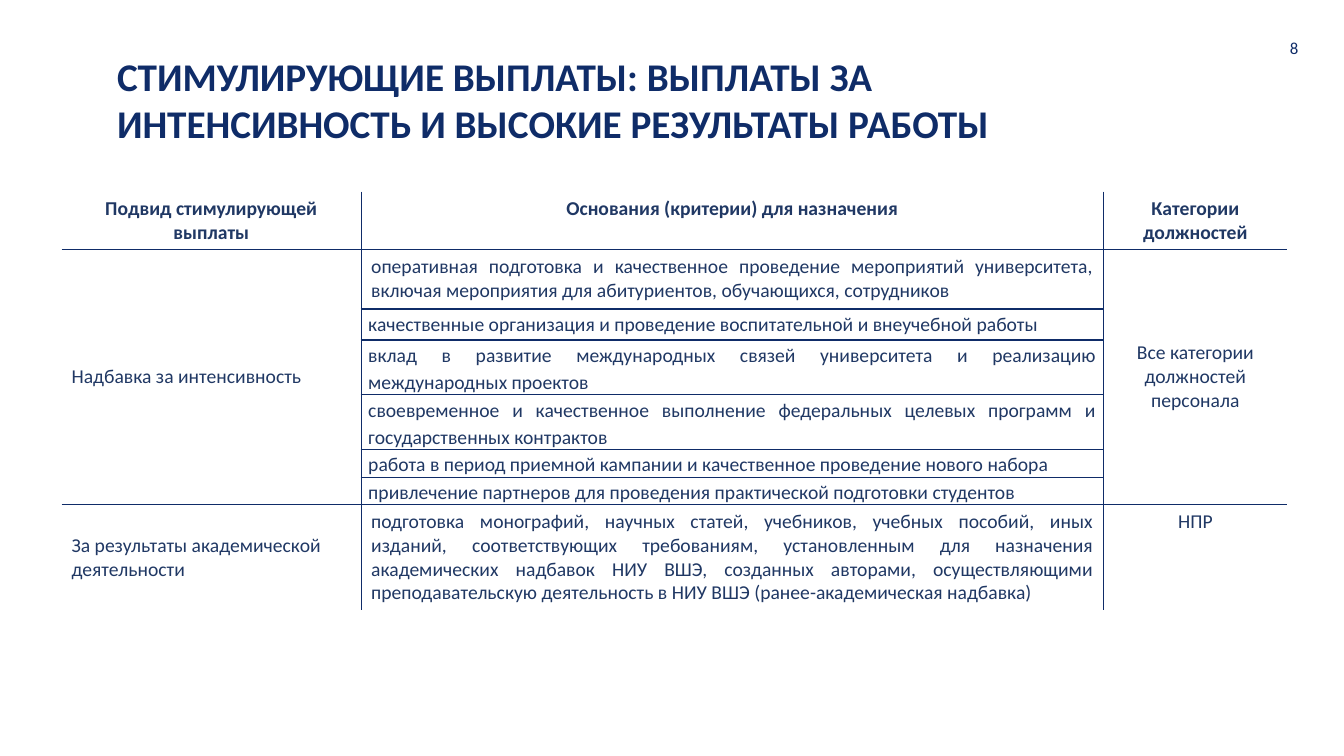
import pptx
import pptx.dml.color
import pptx.enum.text
import pptx.oxml
import pptx.oxml.ns
import pptx.util
from lxml import etree

Cm = pptx.util.Cm
Pt = pptx.util.Pt
ALIGN = pptx.enum.text.PP_ALIGN
ANCHOR = pptx.enum.text.MSO_ANCHOR

NAVY = "0F2C68"
INK = "203864"


def color(value):
    return pptx.dml.color.RGBColor.from_string(value)


class Deck:
    font = "Calibri"

    def __init__(self, width, height):
        self.show = pptx.Presentation()
        self.show.slide_width, self.show.slide_height = Cm(width), Cm(height)
        self.slide = self.show.slides.add_slide(self.show.slide_layouts[6])

    def add_words(self, frame, words, size, ink, bold=False, align=ALIGN.LEFT, spacing=None):
        paragraph = frame.paragraphs[0]
        paragraph.alignment = align
        if spacing:
            paragraph.line_spacing = spacing
        run = paragraph.add_run()
        run.text = words
        run.font.name, run.font.size, run.font.bold = self.font, Pt(size), bold
        run.font.color.rgb = color(ink)

    def text(self, box, words, size, bold=False, align=ALIGN.LEFT,
             anchor=ANCHOR.TOP, inset=None):
        frame = self.slide.shapes.add_textbox(*map(Cm, box)).text_frame
        frame.word_wrap = True
        frame.vertical_anchor = anchor
        if inset is not None:
            frame.margin_left = frame.margin_right = Cm(inset)
            frame.margin_top = frame.margin_bottom = Cm(inset)
        self.add_words(frame, words, size, NAVY, bold, align)

    def table(self, left, top, widths, heights):
        grid = self.slide.shapes.add_table(
            len(heights), len(widths), Cm(left), Cm(top),
            Cm(sum(widths)), Cm(sum(heights))).table
        grid.first_row = grid.horz_banding = False
        for column, width in zip(grid.columns, widths):
            column.width = Cm(width)
        for row, height in zip(grid.rows, heights):
            row.height = Cm(height)
        # Rules on inner edges only
        for r in range(len(heights)):
            for c in range(len(widths)):
                cell = grid.cell(r, c)
                cell.fill.background()
                self.borders(cell, {"lnL": c > 0, "lnR": c < len(widths) - 1,
                                    "lnT": r > 0, "lnB": r < len(heights) - 1})
        return grid

    def borders(self, cell, edges):
        qn = pptx.oxml.ns.qn
        properties = cell._tc.get_or_add_tcPr()
        for position, (edge, drawn) in enumerate(edges.items()):
            line = etree.Element(qn("a:" + edge), w=str(Pt(1)))
            if drawn:
                fill = etree.SubElement(line, qn("a:solidFill"))
                etree.SubElement(fill, qn("a:srgbClr"), val=NAVY)
            else:
                etree.SubElement(line, qn("a:noFill"))
            properties.insert(position, line)

    def cell(self, cell, words, bold=False, align=ALIGN.LEFT, anchor=ANCHOR.TOP, tight=False):
        cell.vertical_anchor = anchor
        if tight:
            cell.margin_left = cell.margin_right = Cm(0.18)
            cell.margin_top = cell.margin_bottom = 0
        self.add_words(cell.text_frame, words, 14, INK, bold, align, 1.15 if tight else None)

    def save(self):
        self.show.save("out.pptx")


HEADINGS = ["Подвид стимулирующей выплаты", "Основания (критерии) для назначения",
            "Категории должностей"]
CRITERIA = [
    "оперативная подготовка и качественное проведение мероприятий университета, "
    "включая мероприятия для абитуриентов, обучающихся, сотрудников",
    "качественные организация и проведение воспитательной и внеучебной работы",
    "вклад в развитие международных связей университета и реализацию международных проектов",
    "своевременное и качественное выполнение федеральных целевых программ "
    "и государственных контрактов",
    "работа в период приемной кампании и качественное проведение нового набора",
    "привлечение партнеров для проведения практической подготовки студентов",
    "подготовка монографий, научных статей, учебников, учебных пособий, иных изданий, "
    "соответствующих требованиям, установленным для назначения академических надбавок "
    "НИУ ВШЭ, созданных авторами, осуществляющими преподавательскую деятельность "
    "в НИУ ВШЭ (ранее-академическая надбавка)",
]


def main():
    deck = Deck(33.87, 19.05)

    # Table of payments
    payments = deck.table(1.55, 4.83, [7.55, 18.71, 4.63],
                          [1.45, 1.5, 0.78, 1.38, 1.38, 0.69, 0.69, 2.64])
    last = len(CRITERIA)
    for column in (0, 2):
        payments.cell(1, column).merge(payments.cell(last - 1, column))
    for column, heading in enumerate(HEADINGS):
        deck.cell(payments.cell(0, column), heading, bold=True, align=ALIGN.CENTER)
    for row, criterion in enumerate(CRITERIA, 1):
        deck.cell(payments.cell(row, 1), criterion, align=ALIGN.JUSTIFY, tight=1 < row < last)

    # Payment kinds and staff categories
    deck.cell(payments.cell(1, 0), "Надбавка за интенсивность", anchor=ANCHOR.MIDDLE)
    deck.cell(payments.cell(last, 0), "За результаты академической деятельности",
              anchor=ANCHOR.MIDDLE)
    deck.cell(payments.cell(1, 2), "Все категории должностей персонала",
              align=ALIGN.CENTER, anchor=ANCHOR.MIDDLE)
    deck.cell(payments.cell(last, 2), "НПР", align=ALIGN.CENTER)

    # Page number and title
    deck.text((31.14, 0.58, 1.83, 1.27), "8", 12, align=ALIGN.RIGHT, anchor=ANCHOR.MIDDLE)
    deck.text((2.87, 1.24, 22.58, 1.17),
              "СТИМУЛИРУЮЩИЕ ВЫПЛАТЫ: ВЫПЛАТЫ ЗА ИНТЕНСИВНОСТЬ И ВЫСОКИЕ РЕЗУЛЬТАТЫ РАБОТЫ",
              28, bold=True, inset=0.08)
    deck.save()


if __name__ == "__main__":
    main()
